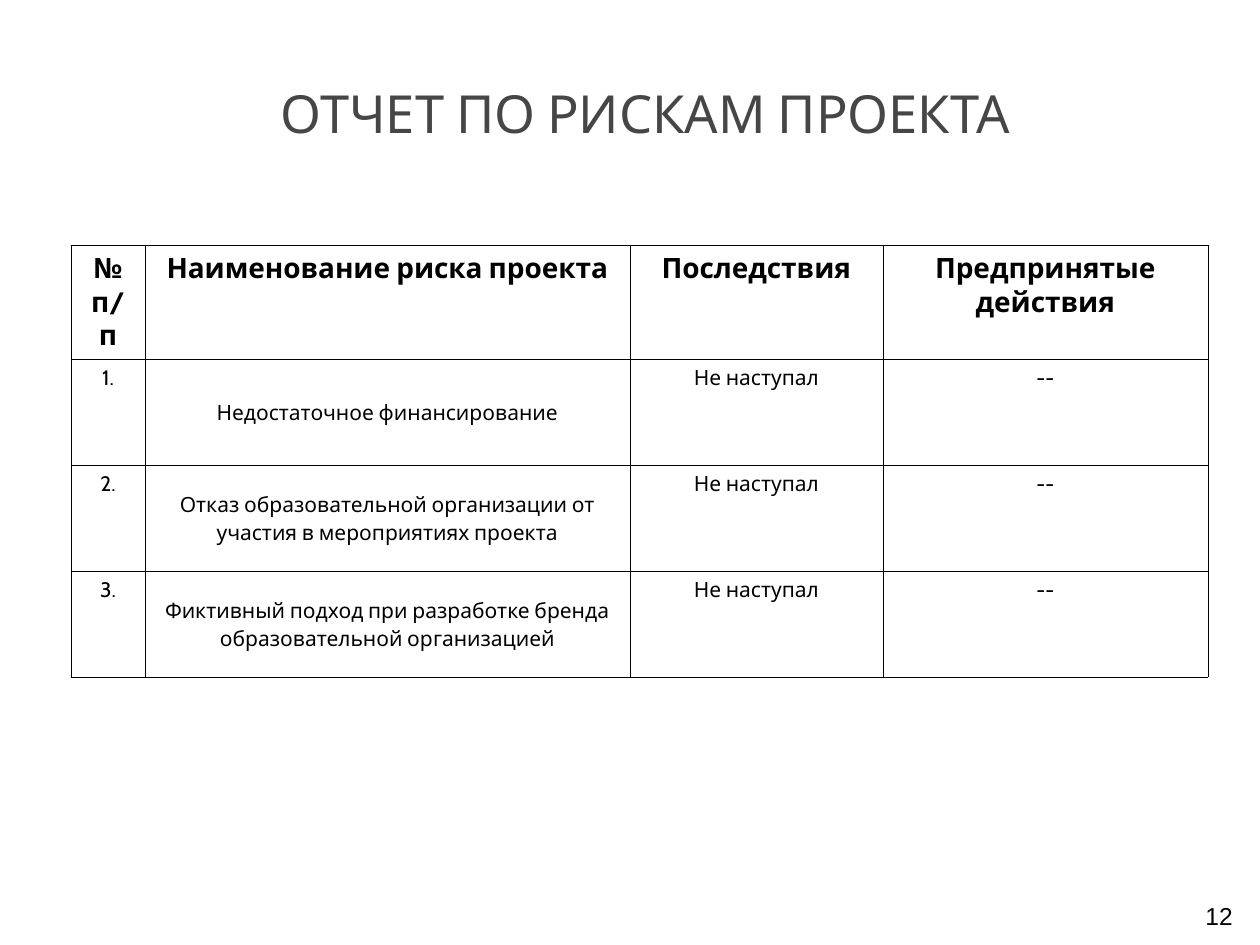
from lxml.etree import SubElement
from pptx import Presentation
from pptx.dml.color import RGBColor
from pptx.enum.text import MSO_ANCHOR as Anchor, PP_ALIGN as Align
from pptx.oxml.ns import qn
from pptx.util import Emu, Pt

BLACK = RGBColor(0x00, 0x00, 0x00)
GRAY = RGBColor(0x46, 0x46, 0x46)
PX = 914400 / 126

COLUMN_WIDTHS = [74, 485, 253, 325]
HEADER_HEIGHT, ROW_HEIGHT = 92, 106
HEADERS = ["№ п/п", "Наименование риска проекта", "Последствия", "Предпринятые действия"]
RISKS = [
    "Недостаточное финансирование",
    "Отказ образовательной организации от участия в мероприятиях проекта",
    "Фиктивный подход при разработке бренда образовательной организацией",
]


def px(length):
    return Emu(round(length * PX))


class RiskSlide:
    """Holds the slide and its style, with a method for each kind of element."""

    font_name = "Cabin"
    border_width = Pt(0.45)

    def __init__(self, slide):
        self.slide = slide

    def set_text(self, text_frame, text, size, color=BLACK, bold=False,
                 align=Align.CENTER, font_name=None):
        text_frame.text = text
        paragraph = text_frame.paragraphs[0]
        paragraph.alignment = align
        for run in paragraph.runs:
            run.font.name = font_name or self.font_name
            run.font.size = Pt(size)
            run.font.bold = bold
            run.font.color.rgb = color
        return paragraph

    def title(self, text, left, top, width, height):
        shape = self.slide.shapes.title
        shape.left, shape.top = px(left), px(top)
        shape.width, shape.height = px(width), px(height)
        shape.text_frame.vertical_anchor = Anchor.MIDDLE
        self.set_text(shape.text_frame, text, 30, GRAY)

    def page_number(self, text, left, top, width, height):
        shape = self.slide.shapes.add_textbox(px(left), px(top), px(width), px(height))
        shape.text_frame.word_wrap = True
        self.set_text(shape.text_frame, text, 14, align=Align.LEFT, font_name="Arial")

    def border(self, cell):
        properties = cell._tc.get_or_add_tcPr()
        for side in ("lnL", "lnR", "lnT", "lnB"):
            line = SubElement(properties, qn(f"a:{side}"), w=str(self.border_width))
            fill = SubElement(line, qn("a:solidFill"))
            SubElement(fill, qn("a:srgbClr"), val=str(BLACK))

    def cell(self, cell, text, is_header, is_risk):
        self.border(cell)
        cell.fill.background()
        paragraph = self.set_text(cell.text_frame, text, 16 if is_header else 12, bold=is_header)
        if is_risk:
            cell.vertical_anchor = Anchor.MIDDLE
            cell.margin_left = cell.margin_right = px(9)
            cell.margin_top = cell.margin_bottom = 0
            paragraph.line_spacing = 1.07

    def table(self, rows, left, top):
        heights = [HEADER_HEIGHT] + [ROW_HEIGHT] * (len(rows) - 1)
        table = self.slide.shapes.add_table(
            len(rows), len(COLUMN_WIDTHS), px(left), px(top),
            px(sum(COLUMN_WIDTHS)), px(sum(heights))).table
        table.first_row = table.horz_banding = False
        for column, width in zip(table.columns, COLUMN_WIDTHS):
            column.width = px(width)
        for i, (values, height) in enumerate(zip(rows, heights)):
            table.rows[i].height = px(height)
            for j, text in enumerate(values):
                self.cell(table.cell(i, j), text, i == 0, i > 0 and j == 1)


def main():
    presentation = Presentation()
    presentation.slide_width, presentation.slide_height = px(1260), px(945)
    page = RiskSlide(presentation.slides.add_slide(presentation.slide_layouts[5]))
    page.title("ОТЧЕТ ПО РИСКАМ ПРОЕКТА", 47, 69, 1197, 88)
    rows = [[f"{number}.", risk, "Не наступал", "--"] for number, risk in enumerate(RISKS, 1)]
    page.table([HEADERS] + rows, 71, 245)
    page.page_number("12", 1193, 895, 67, 43)
    presentation.save("out.pptx")


if __name__ == "__main__":
    main()
